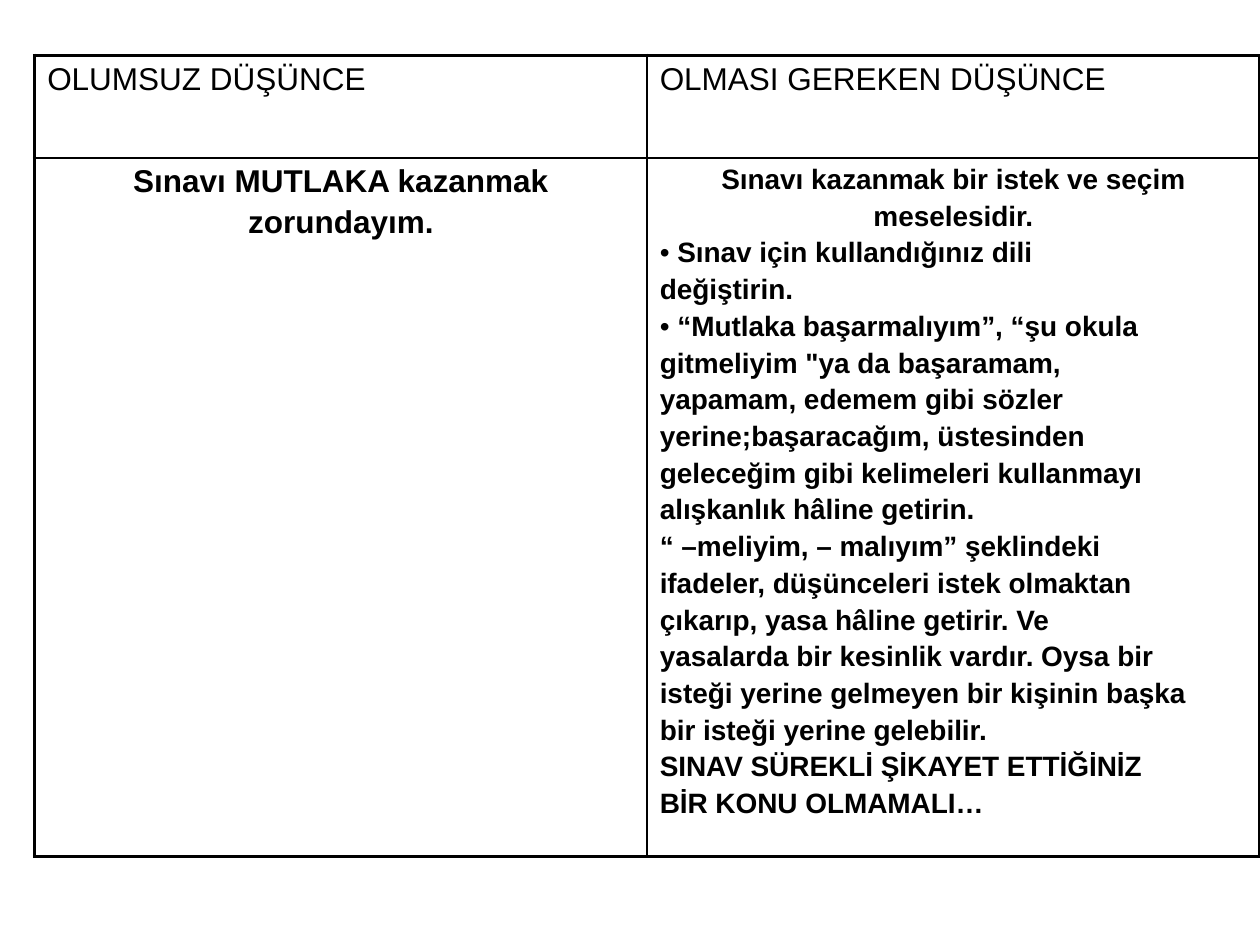
from dataclasses import dataclass

from lxml.etree import SubElement
from pptx import Presentation
from pptx.dml.color import RGBColor
from pptx.enum.text import PP_ALIGN as Align
from pptx.oxml.ns import qn
from pptx.util import Pt

COLORS = {"ink": "000000"}
FONT = "Arial"
OUTER, INNER = 2.25, 1
COL_WIDTH = 350
ROW_HEIGHTS = (58.7, 399.3)
BULLET = "• "


@dataclass
class CellText:
    lines: list[str]
    size: float
    bold: bool = False
    centered: int = 0  # number of leading lines that are centred


ROWS = [
    [CellText(["OLUMSUZ DÜŞÜNCE"], 18),
     CellText(["OLMASI GEREKEN DÜŞÜNCE"], 18)],
    [CellText(["Sınavı MUTLAKA kazanmak", "zorundayım."], 18, True, 2),
     CellText([
         "Sınavı kazanmak bir istek ve seçim",
         "meselesidir.",
         "• Sınav için kullandığınız dili",
         "değiştirin.",
         "• “Mutlaka başarmalıyım”, “şu okula",
         "gitmeliyim \"ya da başaramam,",
         "yapamam, edemem gibi sözler",
         "yerine;başaracağım, üstesinden",
         "geleceğim gibi kelimeleri kullanmayı",
         "alışkanlık hâline getirin.",
         "“ –meliyim, – malıyım” şeklindeki",
         "ifadeler, düşünceleri istek olmaktan",
         "çıkarıp, yasa hâline getirir. Ve",
         "yasalarda bir kesinlik vardır. Oysa bir",
         "isteği yerine gelmeyen bir kişinin başka",
         "bir isteği yerine gelebilir.",
         "SINAV SÜREKLİ ŞİKAYET ETTİĞİNİZ",
         "BİR KONU OLMAMALI…",
     ], 16, True, 2)],
]


def set_borders(cell, row: int, col: int) -> None:
    """Thick lines round the table, thin lines between its cells."""
    outer_sides = {"L": col == 0, "R": col == len(ROWS[0]) - 1,
                   "T": row == 0, "B": row == len(ROWS) - 1}
    tc_pr = cell._tc.get_or_add_tcPr()
    for side, is_outer in outer_sides.items():
        width = Pt(OUTER if is_outer else INNER)
        ln = SubElement(tc_pr, qn(f"a:ln{side}"), w=str(int(width)))
        fill = SubElement(ln, qn("a:solidFill"))
        SubElement(fill, qn("a:srgbClr"), val=COLORS["ink"])


def write_text(cell, text: CellText) -> None:
    tf = cell.text_frame
    for i, line in enumerate(text.lines):
        p = tf.paragraphs[0] if i == 0 else tf.add_paragraph()
        p.alignment = Align.CENTER if i < text.centered else Align.LEFT
        p.space_before = Pt(3.2)
        p.font.name = FONT
        p.font.size = Pt(text.size)
        p.font.bold = text.bold
        p.font.color.rgb = RGBColor.from_string(COLORS["ink"])
        if line.startswith(BULLET):
            r = p.add_run()
            r.text = BULLET
            r.font.bold = False
        p.add_run().text = line.removeprefix(BULLET)


def add_thought_table(slide) -> None:
    n_cols = len(ROWS[0])
    table = slide.shapes.add_table(
        len(ROWS), n_cols, Pt(19.8), Pt(31.6),
        Pt(COL_WIDTH * n_cols), Pt(sum(ROW_HEIGHTS))).table
    table.first_row = table.horz_banding = False
    for column in table.columns:
        column.width = Pt(COL_WIDTH)
    for row, height in enumerate(ROW_HEIGHTS):
        table.rows[row].height = Pt(height)
        for col, text in enumerate(ROWS[row]):
            cell = table.cell(row, col)
            set_borders(cell, row, col)
            cell.fill.background()
            write_text(cell, text)


def main() -> None:
    prs = Presentation()
    prs.slide_width, prs.slide_height = Pt(720), Pt(540)
    # Blank layout holding only the two-column table
    add_thought_table(prs.slides.add_slide(prs.slide_layouts[6]))
    prs.save("out.pptx")


if __name__ == "__main__":
    main()
